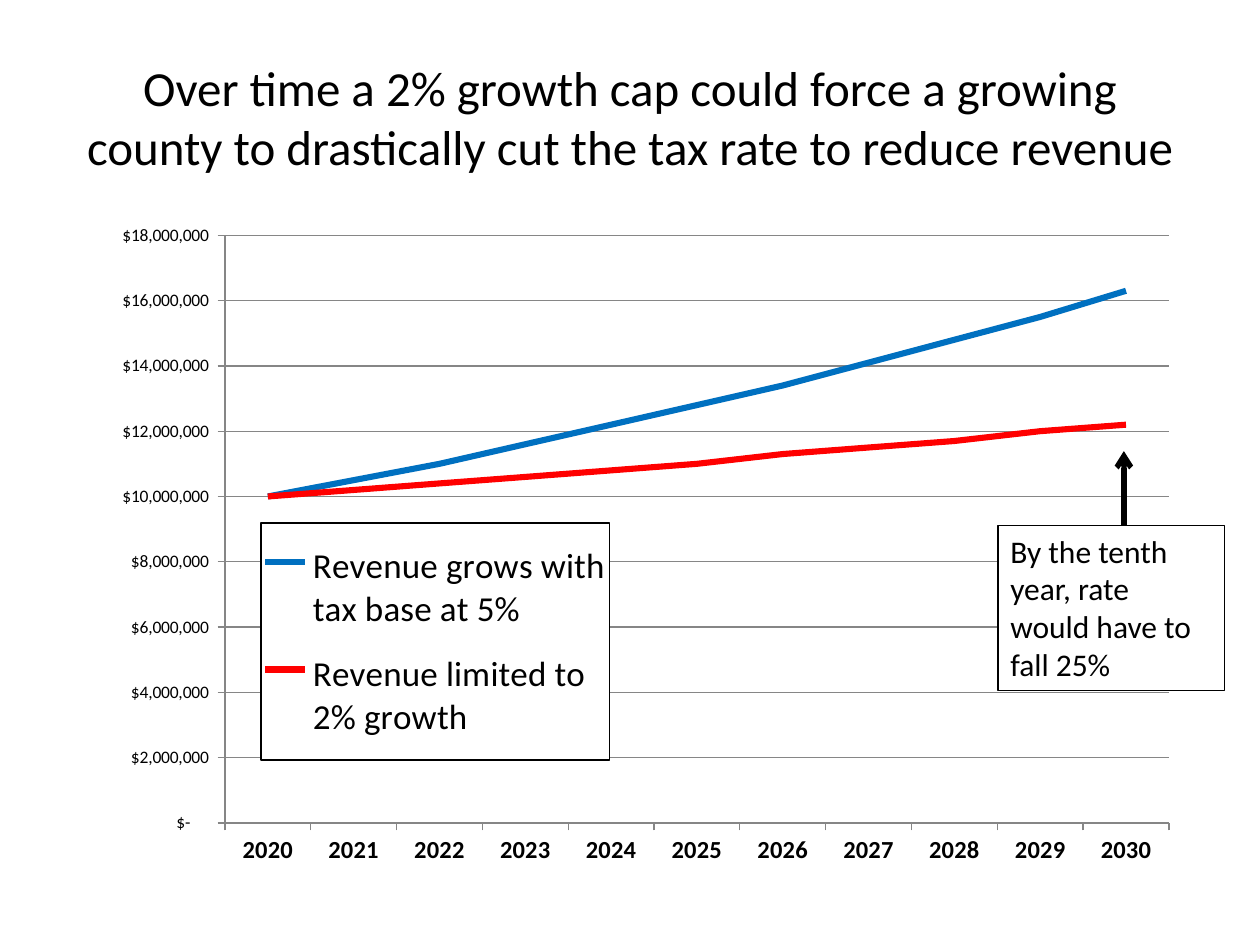
from lxml import etree
from pptx import Presentation
from pptx.chart.data import CategoryChartData
from pptx.dml.color import RGBColor
from pptx.enum.chart import XL_CHART_TYPE as ChartType, XL_LEGEND_POSITION as LegendPosition
from pptx.enum.chart import XL_TICK_MARK as TickMark
from pptx.enum.shapes import MSO_CONNECTOR as Connector, MSO_SHAPE as Shape
from pptx.enum.text import MSO_ANCHOR as Anchor, PP_ALIGN as Align
from pptx.oxml import parse_xml
from pptx.oxml.ns import nsdecls, qn
from pptx.util import Inches, Pt

COLORS = {name: RGBColor.from_string(value) for name, value in {
    "black": "000000", "white": "FFFFFF", "grid": "868686",
    "uncapped": "0070C0", "capped": "FF0000",
}.items()}
FONT = "Calibri"


def style_font(font, size, bold=False):
    font.name = FONT
    font.size = Pt(size)
    font.bold = bold
    font.color.rgb = COLORS["black"]


def manual_layout(x, y, width, height, target=""):
    return parse_xml(
        f'<c:layout {nsdecls("c")}><c:manualLayout>{target}'
        '<c:xMode val="edge"/><c:yMode val="edge"/>'
        f'<c:x val="{x}"/><c:y val="{y}"/><c:w val="{width}"/><c:h val="{height}"/>'
        '</c:manualLayout></c:layout>')


presentation = Presentation()
presentation.slide_width = Inches(10)
presentation.slide_height = Inches(7.5)
slide = presentation.slides.add_slide(presentation.slide_layouts[6])

# Title
title = slide.shapes.add_textbox(Inches(0.5), Inches(0.3), Inches(9), Inches(1.25))
title.text_frame.word_wrap = True
title.text_frame.vertical_anchor = Anchor.MIDDLE
paragraph = title.text_frame.paragraphs[0]
paragraph.text = ("Over time a 2% growth cap could force a growing county "
                  "to drastically cut the tax rate to reduce revenue")
paragraph.alignment = Align.CENTER
style_font(paragraph.font, 28)

# Revenue chart: compound growth, rounded to the nearest $100,000
START_REVENUE = 10_000_000
YEARS = range(2020, 2031)
SCENARIOS = [
    ("Revenue grows with tax base at 5%", 1.05, "uncapped"),
    ("Revenue limited to 2% growth", 1.02, "capped"),
]
chart_data = CategoryChartData()
chart_data.categories = [str(year) for year in YEARS]
for name, growth, _ in SCENARIOS:
    chart_data.add_series(
        name, [round(START_REVENUE * growth ** n, -5) for n in range(len(YEARS))])
chart = slide.shapes.add_chart(
    ChartType.LINE, Inches(0.25), Inches(1.67), Inches(9.25), Inches(5.5), chart_data).chart
chart.has_title = False
style_font(chart.font, 10)

plot = chart.plots[0]
plot.vary_by_categories = False
for series, (_, _, color) in zip(plot.series, SCENARIOS):
    series.smooth = False
    series.format.line.color.rgb = COLORS[color]
    series.format.line.width = Pt(3.5)

# Axes
value_axis, category_axis = chart.value_axis, chart.category_axis
value_axis.minimum_scale = 0
value_axis.maximum_scale = 18_000_000
value_axis.major_unit = 2_000_000
value_axis.has_major_gridlines = True
value_axis.tick_labels.number_format = '_("$"* #,##0_);_("$"* (#,##0);_("$"* "-"??_)'
value_axis.tick_labels.number_format_is_linked = False
style_font(value_axis.tick_labels.font, 10)
style_font(category_axis.tick_labels.font, 14, bold=True)
for axis in (value_axis, category_axis):
    axis.major_tick_mark = TickMark.OUTSIDE
for part in (value_axis, category_axis, value_axis.major_gridlines):
    part.format.line.color.rgb = COLORS["grid"]
    part.format.line.width = Pt(0.75)

# Plot area position
plot_area = chart.element.find(".//" + qn("c:plotArea"))
for layout in plot_area.findall(qn("c:layout")):
    plot_area.remove(layout)
plot_area.insert(0, manual_layout(0.166, 0.036, 0.81, 0.848,
                                  '<c:layoutTarget val="inner"/>'))

# Boxed legend over the plot
chart.has_legend = True
legend = chart.legend
legend.position = LegendPosition.RIGHT
legend.include_in_layout = False
style_font(legend.font, 20)
legend_element = chart.element.find(".//" + qn("c:legend"))
for layout in legend_element.findall(qn("c:layout")):
    legend_element.remove(layout)
legend_element.find(qn("c:legendPos")).addnext(manual_layout(0.197, 0.451, 0.299, 0.342))
legend_element.find(qn("c:txPr")).addprevious(parse_xml(
    f'<c:spPr {nsdecls("c", "a")}>'
    f'<a:solidFill><a:srgbClr val="{COLORS["white"]}"/></a:solidFill>'
    f'<a:ln w="{Pt(0.75)}"><a:solidFill><a:srgbClr val="{COLORS["black"]}"/></a:solidFill></a:ln>'
    '</c:spPr>'))

# Callout box
callout = slide.shapes.add_shape(
    Shape.RECTANGLE, Inches(7.92), Inches(4.17), Inches(1.8), Inches(1.31))
callout.shadow.inherit = False
callout.fill.solid()
callout.fill.fore_color.rgb = COLORS["white"]
callout.line.color.rgb = COLORS["black"]
callout.line.width = Pt(0.75)
callout.text_frame.word_wrap = True
callout.text_frame.vertical_anchor = Anchor.TOP
paragraph = callout.text_frame.paragraphs[0]
paragraph.text = "By the tenth year, rate would have to fall 25%"
paragraph.alignment = Align.LEFT
style_font(paragraph.font, 18)

# Arrow from the callout up to the capped line
arrow = slide.shapes.add_connector(
    Connector.STRAIGHT, Inches(8.92), Inches(4.17), Inches(8.92), Inches(3.58))
arrow.line.color.rgb = COLORS["black"]
arrow.line.width = Pt(3)
etree.SubElement(arrow.line._get_or_add_ln(), qn("a:tailEnd"), type="arrow")
etree.SubElement(arrow.element.spPr, qn("a:effectLst"))

presentation.save("out.pptx")
